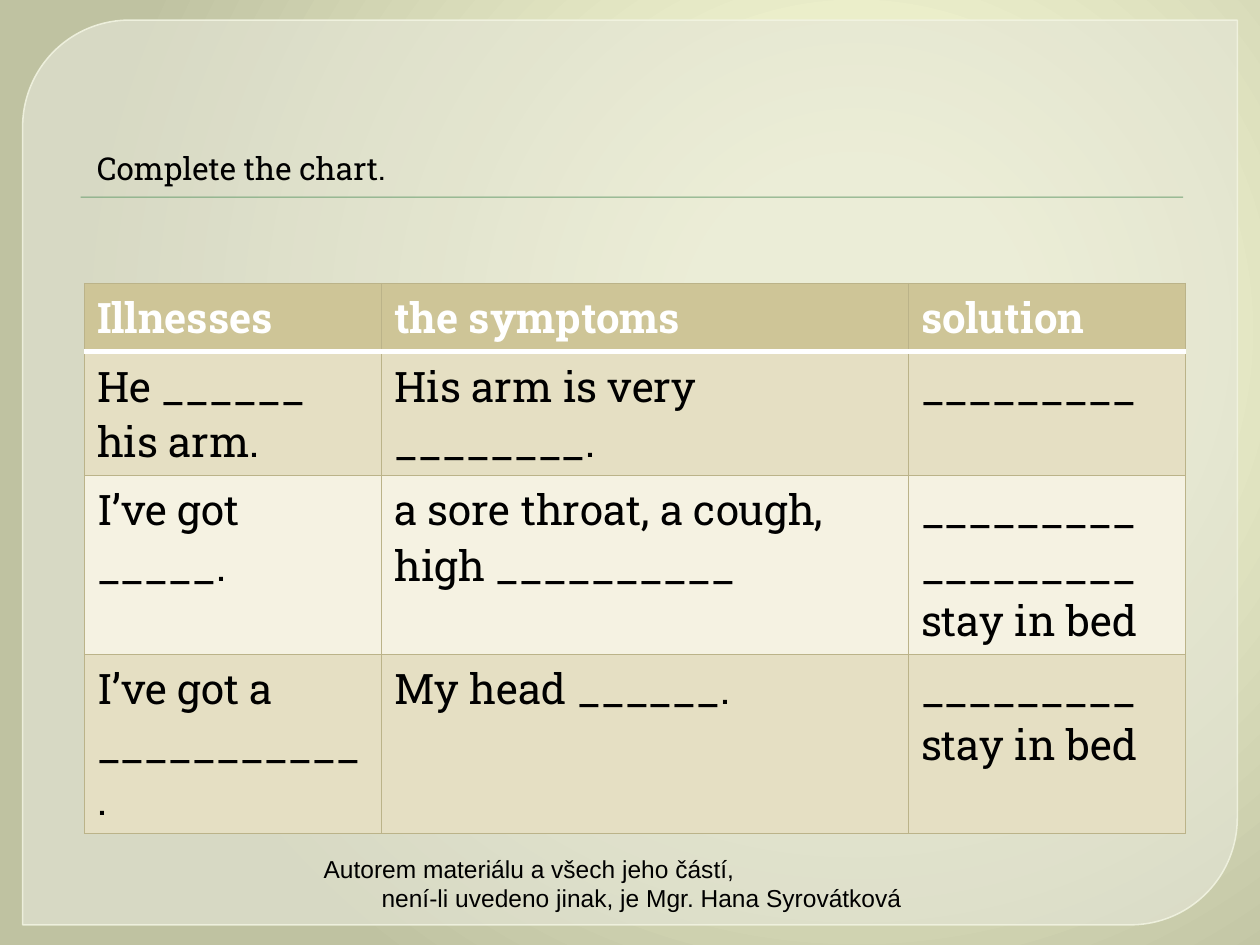
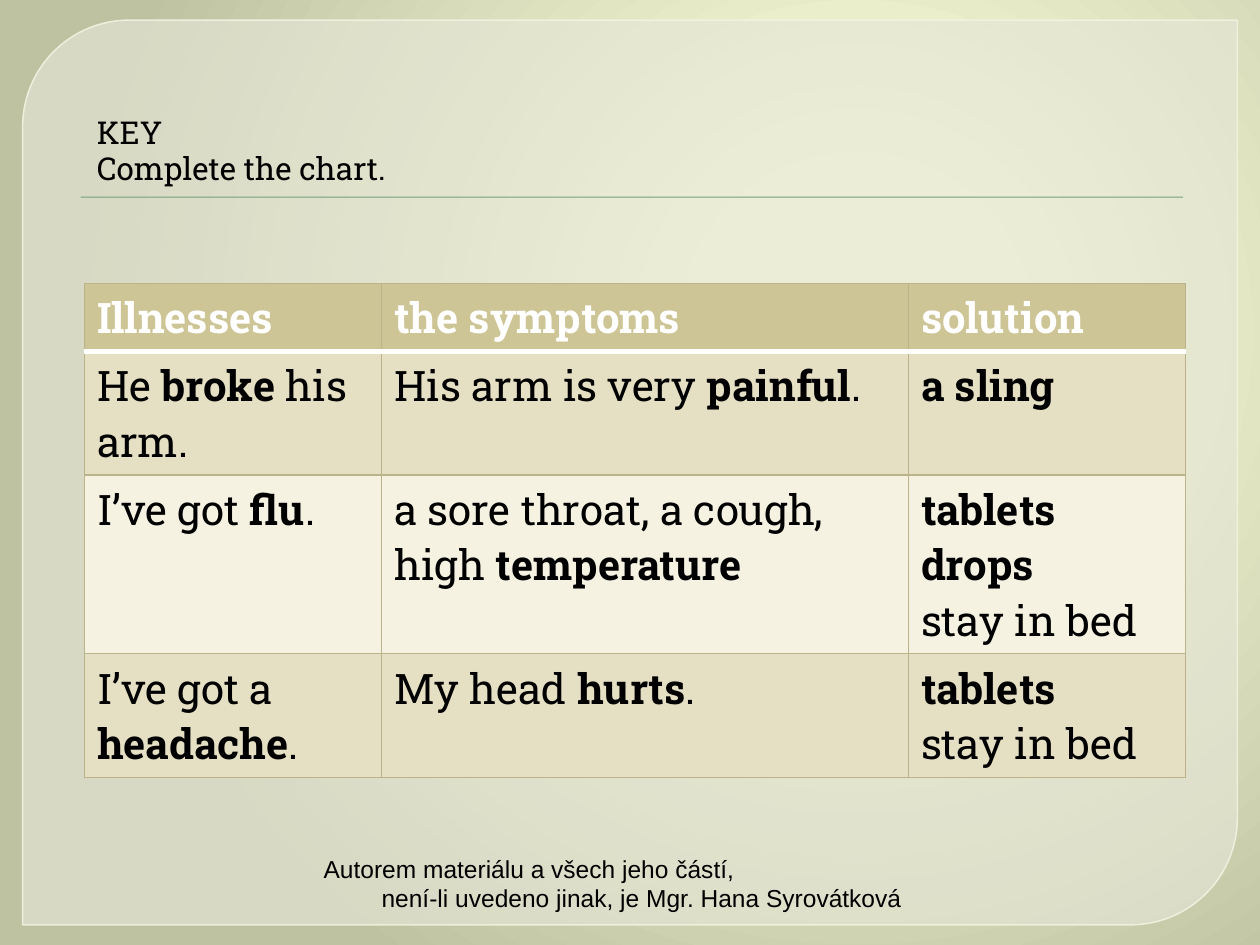
from lxml import etree
from pptx import Presentation
from pptx.dml.color import RGBColor
from pptx.enum.shapes import MSO_SHAPE
from pptx.enum.text import MSO_ANCHOR
from pptx.oxml import parse_xml
from pptx.oxml.ns import qn
from pptx.util import Inches, Pt

PANEL_SHAPE = MSO_SHAPE.ROUND_2_DIAG_RECTANGLE
RECT = MSO_SHAPE.RECTANGLE
BOTTOM, MIDDLE = MSO_ANCHOR.BOTTOM, MSO_ANCHOR.MIDDLE

HEADER = ["Illnesses", "the symptoms", "solution"]
SLIDES = [
    {
        "title": ["Complete the chart."],
        "row_lines": [1, 2, 3, 3],
        "rows": [
            ["He ______ his arm.", "His arm is very ________.", "_________"],
            ["I’ve got _____.", "a sore throat, a cough, high __________",
             "_________\n_________\nstay in bed"],
            ["I’ve got a ___________.", "My head ______.", "_________\nstay in bed"],
        ],
    },
    {
        "title": ["KEY", "Complete the chart."],
        "row_lines": [1, 2, 3, 2],
        "rows": [
            ["He *broke* his arm.", "His arm is very *painful*.", "*a sling*"],
            ["I’ve got *flu*.", "a sore throat, a cough, high *temperature*",
             "*tablets*\n*drops*\nstay in bed"],
            ["I’ve got a *headache*.", "My head *hurts*.", "*tablets*\nstay in bed"],
        ],
    },
]
FOOTER = [("Autorem materiálu a všech jeho částí,", 0),
          ("není-li uvedeno jinak, je Mgr. Hana Syrovátková", 0.46)]

COLORS = {
    "glow": "FBFED9", "glow_mid": "F9FCD8", "edge": "BFC2A1",
    "panel": "E5E6D7", "panel_line": "F2F4E2", "rule": "72A376",
    "header": "CEC597", "band": "E5DFC3", "plain": "F5F2E2",
    "grid": "BBB389", "white": "FFFFFF", "black": "000000",
}
GLOW_STOPS = [(0, "glow"), (20, "glow_mid"), (100, "edge")]
SERIF, SANS = "Roboto Slab", "Arial"
COL_WIDTHS = [2.36, 4.18, 2.2]
LINE_HEIGHT, CELL_PADDING = 0.44, 0.1
A_NS = 'xmlns:a="http://schemas.openxmlformats.org/drawingml/2006/main"'


def rgb(name):
    return RGBColor.from_string(COLORS[name])


def add_run(p, text, font, size, color="black", bold=False):
    r = p.add_run()
    r.text = text
    r.font.name, r.font.size, r.font.bold = font, Pt(size), bold
    r.font.color.rgb = rgb(color)


def add_text_box(s, box, anchor):
    tf = s.shapes.add_textbox(*map(Inches, box)).text_frame
    tf.word_wrap = True
    tf.vertical_anchor = anchor
    return tf


def next_paragraph(tf, i):
    return tf.add_paragraph() if i else tf.paragraphs[0]


def set_alpha(clr, percent):
    etree.SubElement(clr, qn("a:alpha")).set("val", str(percent * 1000))


def add_background(s):
    s.background.fill.solid()
    bg_pr = s._element.find(".//" + qn("p:bgPr"))
    stops = "".join(f'<a:gs pos="{pos * 1000}"><a:srgbClr val="{COLORS[c]}"/></a:gs>'
                    for pos, c in GLOW_STOPS)
    bg_pr.replace(bg_pr[0], parse_xml(
        f'<a:gradFill {A_NS} rotWithShape="1"><a:gsLst>{stops}</a:gsLst>'
        '<a:path path="circle"><a:fillToRect l="68000" t="35000" r="32000" b="65000"/>'
        '</a:path></a:gradFill>'))


def add_frame(s):
    panel = s.shapes.add_shape(PANEL_SHAPE, *map(Inches, (0.18, 0.16, 9.64, 7.18)))
    panel.adjustments[0], panel.adjustments[1] = 0.118, 0
    panel.shadow.inherit = False
    panel.fill.solid()
    panel.fill.fore_color.rgb = rgb("panel")
    panel.line.color.rgb = rgb("panel_line")
    panel.line.width = Pt(0.87)
    for clr, alpha in zip(panel._element.spPr.iter(qn("a:srgbClr")), (65, 88)):
        set_alpha(clr, alpha)

    rule = s.shapes.add_shape(RECT, *map(Inches, (0.64, 1.56, 8.75, 0.01)))
    rule.shadow.inherit = False
    rule.fill.solid()
    rule.fill.fore_color.rgb = rgb("rule")
    rule.line.fill.background()


def set_border(tc_pr, side, color, width):
    tc_pr.append(parse_xml(
        f'<a:{side} {A_NS} w="{Pt(width)}"><a:solidFill>'
        f'<a:srgbClr val="{COLORS[color]}"/></a:solidFill></a:{side}>'))


def fill_cell(cell, text, row):
    heavy = {"lnB": row == 0, "lnT": row == 1}
    tc_pr = cell._tc.get_or_add_tcPr()
    for side in ("lnL", "lnR", "lnT", "lnB"):
        set_border(tc_pr, side, *(("white", 3) if heavy.get(side) else ("grid", 0.75)))
    cell.fill.solid()
    cell.fill.fore_color.rgb = rgb("header" if row == 0 else "band" if row % 2 else "plain")
    for i, line in enumerate(text.split("\n")):
        p = next_paragraph(cell.text_frame, i)
        for j, part in enumerate(line.split("*")):
            if part:
                add_run(p, part, SERIF, 24, "black" if row else "white",
                        row == 0 or j % 2 == 1)


def add_illness_table(s, body, row_lines):
    rows = [HEADER] + body
    heights = [CELL_PADDING + LINE_HEIGHT * n for n in row_lines]
    table = s.shapes.add_table(len(rows), len(HEADER), Inches(0.67), Inches(2.25),
                               Inches(sum(COL_WIDTHS)), Inches(sum(heights))).table
    for column, width in zip(table.columns, COL_WIDTHS):
        column.width = Inches(width)
    for i, (texts, height) in enumerate(zip(rows, heights)):
        table.rows[i].height = Inches(height)
        for j, text in enumerate(texts):
            fill_cell(table.cell(i, j), text, i)


def add_footer(s):
    tf = add_text_box(s, (2.47, 6.74, 5.12, 0.54), MIDDLE)
    for i, (text, indent) in enumerate(FOOTER):
        p = next_paragraph(tf, i)
        p._p.get_or_add_pPr().set("marL", str(Inches(indent)))
        add_run(p, text, SANS, 14)


def add_title(s, lines):
    tf = add_text_box(s, (0.67, 0.84, 4.17, 0.7), BOTTOM)
    for i, line in enumerate(lines):
        p = next_paragraph(tf, i)
        p.line_spacing = 0.95
        add_run(p, line, SERIF, 18)


def main():
    prs = Presentation()
    prs.slide_width, prs.slide_height = Inches(10), Inches(7.5)
    for content in SLIDES:
        s = prs.slides.add_slide(prs.slide_layouts[6])
        add_background(s)
        add_frame(s)
        add_illness_table(s, content["rows"], content["row_lines"])
        add_footer(s)
        add_title(s, content["title"])
    prs.save("out.pptx")


if __name__ == "__main__":
    main()
